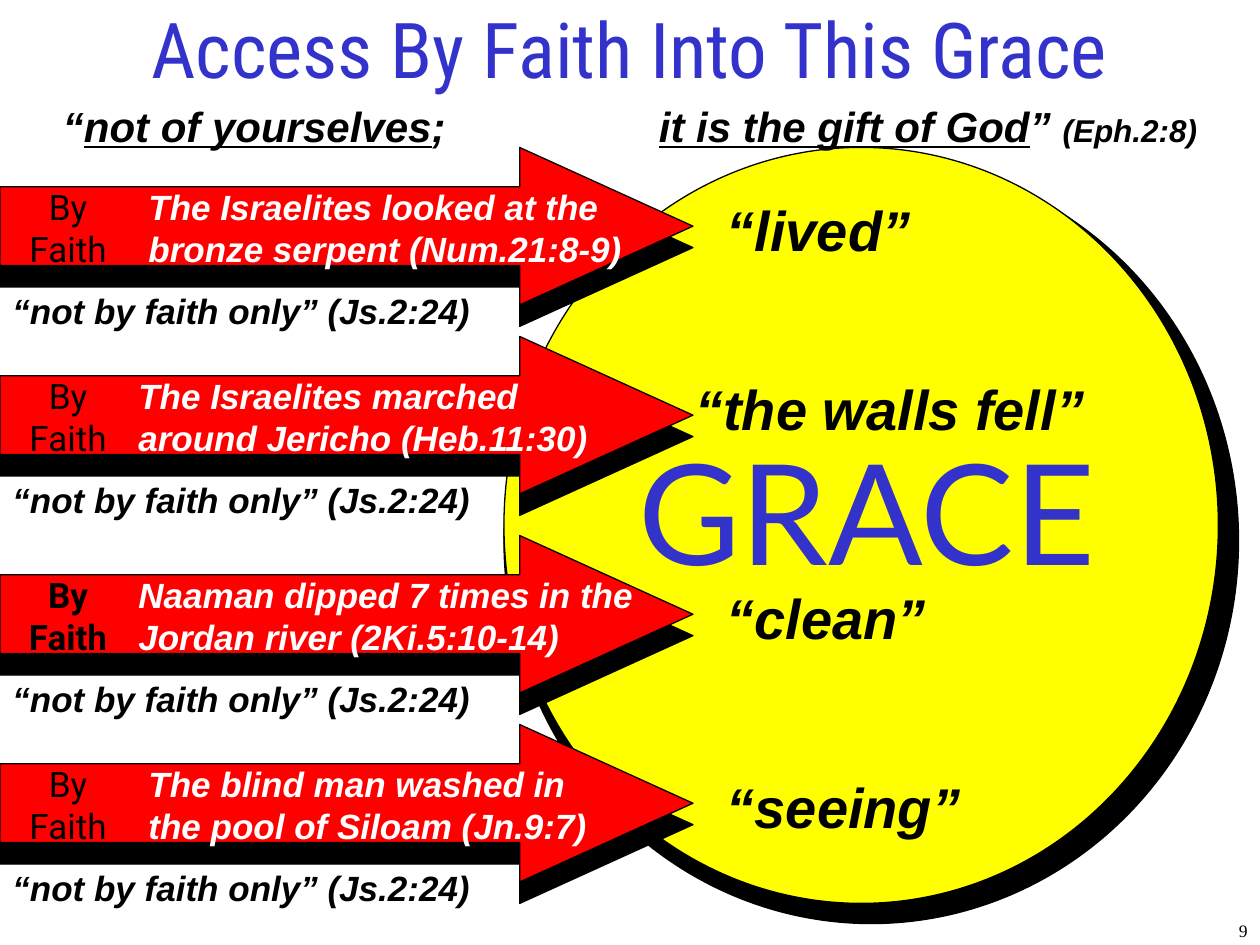
"""Build the slide "Access By Faith Into This Grace"."""
from lxml.etree import SubElement
from pptx import Presentation
from pptx.dml.color import RGBColor
from pptx.enum.shapes import MSO_SHAPE as Shape
from pptx.enum.text import MSO_ANCHOR as Anchor, PP_ALIGN as Align
from pptx.oxml.ns import qn
from pptx.util import Inches, Pt

BLACK = RGBColor(0x00, 0x00, 0x00)
WHITE = RGBColor(0xFF, 0xFF, 0xFF)
RED = RGBColor(0xFF, 0x00, 0x00)
YELLOW = RGBColor(0xFF, 0xFF, 0x00)
BLUE = RGBColor(0x33, 0x33, 0xCC)

SHADOW_DROP = 0.17
EXAMPLES = [
    (1.17, 1.08, 4, "The Israelites looked at the bronze serpent (Num.21:8-9)",
     5.67, 0.33, 2.17, "“lived”", False),
    (2.67, 1, 4, "The Israelites marched around Jericho (Heb.11:30)",
     5.42, 0.25, 3.75, "“the walls fell”", False),
    (4.25, 1, 4.17, "Naaman dipped 7 times in the Jordan river (2Ki.5:10-14)",
     5.67, 0.33, 2.17, "“clean”", True),
    (5.75, 1.08, 4, "The blind man washed in the pool of Siloam (Jn.9:7)",
     5.67, 0.33, 2.17, "“seeing”", False),
]
VERSE = [("“", False, 24), ("not of yourselves", True, 24), (";\t", False, 24),
         ("it is the gift of God", True, 24), ("” ", False, 24), ("(Eph.2:8)", False, 18)]


class Painter:
    """Draws styled elements on the current slide."""

    def __init__(self, slide):
        self.slide = slide

    def figure(self, kind, left, top, width, height, color):
        figure = self.slide.shapes.add_shape(
            kind, Inches(left), Inches(top), Inches(width), Inches(height))
        figure.shadow.inherit = False
        figure.fill.solid()
        figure.fill.fore_color.rgb = color
        figure.line.color.rgb = BLACK
        figure.line.width = Pt(0.75)
        return figure

    def arrow(self, top, color):
        arrow = self.figure(Shape.RIGHT_ARROW, 0, top, 5.5, 1.25, color)
        arrow.adjustments[0] = 0.5
        arrow.adjustments[1] = 1.1

    def text(self, words, left, top, width, height, size, font="Arial", color=BLACK,
             bold=False, italic=False, align=Align.LEFT, anchor=Anchor.TOP):
        frame = self.slide.shapes.add_textbox(
            Inches(left), Inches(top), Inches(width), Inches(height)).text_frame
        frame.word_wrap = True
        frame.vertical_anchor = anchor
        paragraph = frame.paragraphs[0]
        paragraph.text = words
        paragraph.alignment = align
        style = paragraph.font
        style.name, style.size, style.color.rgb = font, Pt(size), color
        style.bold, style.italic = bold, italic
        return frame

    def statement(self, words, left, top, width, height, size, color=BLACK):
        return self.text(words, left, top, width, height, size, color=color,
                         bold=True, italic=True)

    def verse(self, parts, top, indent, second_half):
        frame = self.statement("", 0, top, 10, 0.5, 24)
        frame.margin_left = Inches(indent)
        paragraph = frame.paragraphs[0]
        for words, underlined, size in parts:
            run = paragraph.add_run()
            run.text = words
            run.font.underline = underlined
            run.font.size = Pt(size)
        properties = paragraph._p.get_or_add_pPr()
        stops = SubElement(properties, qn("a:tabLst"))
        SubElement(stops, qn("a:tab"), pos=str(Inches(second_half - indent)), algn="l")
        properties.insert(0, stops)


def main():
    deck = Presentation()
    deck.slide_width, deck.slide_height = Inches(10), Inches(7.5)
    painter = Painter(deck.slides.add_slide(deck.slide_layouts[6]))

    painter.text("9", 7.92, 7.25, 2.08, 0.25, 10, "Times New Roman", align=Align.RIGHT)
    painter.figure(Shape.OVAL, 4, 1.25, 5.83, 6.08, BLACK)
    painter.figure(Shape.OVAL, 4, 1.17, 5.67, 6, YELLOW)
    painter.text("GRACE", 4.17, 3.33, 5.42, 1.43, 80, "Lato", BLUE, align=Align.CENTER)

    for drop, color in ((SHADOW_DROP, BLACK), (0, RED)):
        for top, *_ in EXAMPLES:
            painter.arrow(top + drop, color)

    for (top, deed_left, deed_width, deed, result_left, result_drop, result_width,
         result, bold) in EXAMPLES:
        painter.statement(result, result_left, top + result_drop, result_width, 0.63, 32)
        painter.statement(deed, deed_left, top + 0.25, deed_width, 0.77, 20, WHITE)
        painter.text("By Faith", 0, top + 0.25, 1.08, 0.77, 20, "Roboto",
                     bold=bold, align=Align.CENTER)
        painter.statement("“not by faith only” (Js.2:24)", 0, top + 1.08, 4.58, 0.43, 20)

    painter.verse(VERSE, top=0.75, indent=0.5, second_half=5.23)
    painter.text("Access By Faith Into This Grace", 0.75, 0, 8.5, 0.75, 44,
                 "Roboto Condensed", BLUE, align=Align.CENTER, anchor=Anchor.MIDDLE)
    deck.save("out.pptx")


if __name__ == "__main__":
    main()
